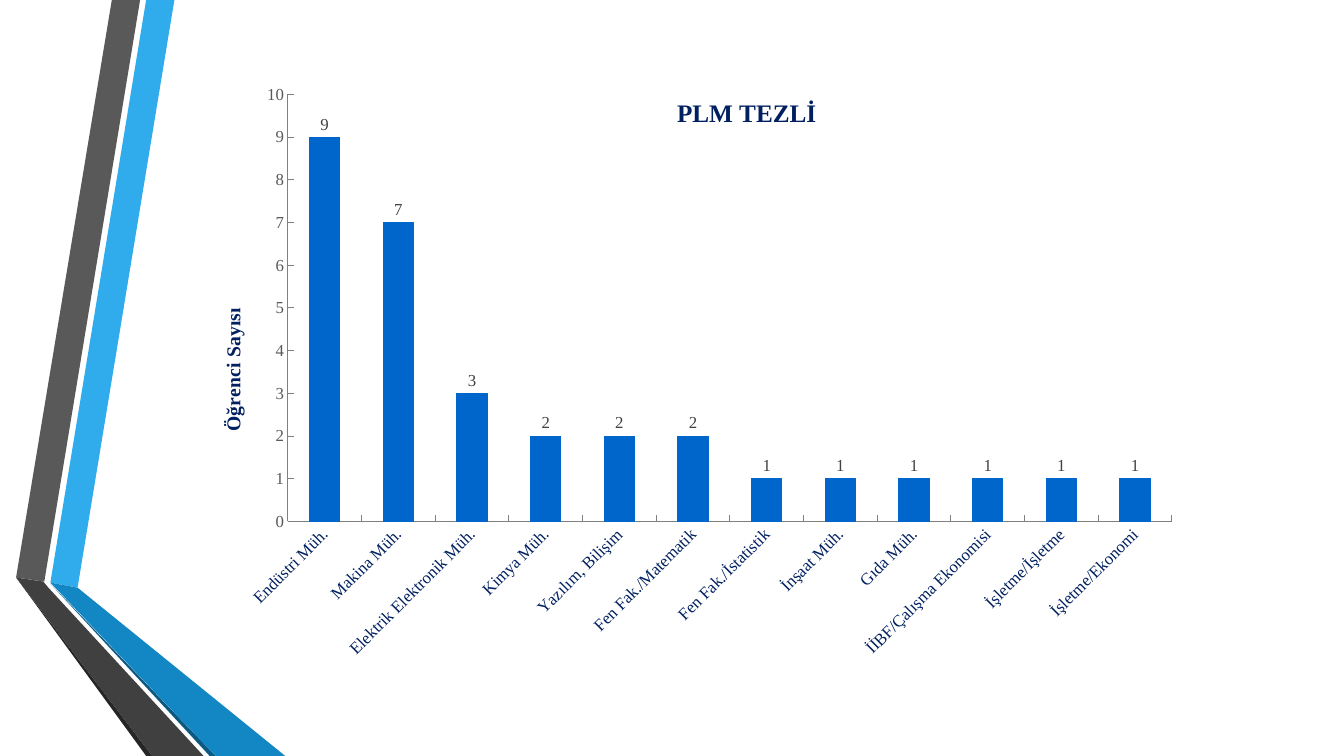
import pptx
import pptx.chart.data
import pptx.dml.color
import pptx.enum.chart
import pptx.oxml
import pptx.oxml.ns
import pptx.util
from pptx.util import Inches

COLORS = {
    "sky": "30ACEC", "gray": "595959", "black": "262626", "deep": "0C5A82",
    "blue": "1287C3", "charcoal": "404040", "navy": "002060",
    "axis": "808080", "bar": "0066CC",
}
RIBBONS = [
    ("sky", [(0.5, 5.78), (0.77, 5.83), (1.73, 0), (1.45, 0)]),
    ("gray", [(1.39, 0), (1.11, 0), (0.16, 5.73), (0.44, 5.77)]),
    ("black", [(0.16, 5.73), (1.45, 7.5), (1.51, 7.5)]),
    ("deep", [(0.5, 5.79), (2.08, 7.5), (2.14, 7.5)]),
    ("blue", [(0.5, 5.78), (2.14, 7.5), (2.83, 7.5), (0.77, 5.83)]),
    ("charcoal", [(2.02, 7.5), (0.48, 5.83), (0.43, 5.77), (0.16, 5.73), (1.51, 7.5)]),
]
STUDENTS = {
    "Endüstri Müh.": 9,
    "Makina Müh.": 7,
    "Elektrik Elektronik Müh.": 3,
    "Kimya Müh.": 2,
    "Yazılım, Bilişim": 2,
    "Fen Fak./Matematik": 2,
    "Fen Fak./İstatistik": 1,
    "İnşaat Müh.": 1,
    "Gıda Müh.": 1,
    "İİBF/Çalışma Ekonomisi": 1,
    "İşletme/İşletme": 1,
    "İşletme/Ekonomi": 1,
}


def rgb(name):
    return pptx.dml.color.RGBColor.from_string(COLORS[name])


def format_font(font, size=12, color="navy", bold=False, name="Times New Roman"):
    font.size = pptx.util.Pt(size)
    font.bold = bold
    font.name = name
    font.color.rgb = rgb(color)


def write_title(title, text, **style):
    para = title.text_frame.paragraphs[0]
    span = para.add_run()
    span.text = text
    format_font(span.font, **style)


def place(parent, index, inner=False, **fractions):
    tag = pptx.oxml.ns.qn("c:layout")
    for old in parent.findall(tag):
        parent.remove(old)
    target = '<c:layoutTarget val="inner"/>' if inner else ""
    modes = "".join(f'<c:{key}Mode val="edge"/>' for key in "xy")
    values = "".join(f'<c:{key} val="{value}"/>' for key, value in fractions.items())
    parent.insert(index, pptx.oxml.parse_xml(
        f'<c:layout {pptx.oxml.ns.nsdecls("c")}><c:manualLayout>'
        f"{target}{modes}{values}</c:manualLayout></c:layout>"))


class SlideBuilder:
    def __init__(self, page):
        self.page = page

    def ribbon(self, color, points):
        corners = [(Inches(x), Inches(y)) for x, y in points]
        builder = self.page.shapes.build_freeform(*corners[0])
        builder.add_line_segments(corners[1:], close=True)
        shape = builder.convert_to_shape()
        shape.shadow.inherit = False
        shape.fill.solid()
        shape.fill.fore_color.rgb = rgb(color)
        shape.line.fill.background()

    def axis(self, axis, color):
        axis.has_major_gridlines = False
        axis.major_tick_mark = pptx.enum.chart.XL_TICK_MARK.INSIDE
        axis.minor_tick_mark = pptx.enum.chart.XL_TICK_MARK.NONE
        axis.format.line.color.rgb = rgb("axis")
        axis.format.line.width = pptx.util.Pt(0.75)
        format_font(axis.tick_labels.font, color=color)

    def column_chart(self, title, axis_title, counts, left, top, width, height):
        data = pptx.chart.data.CategoryChartData()
        data.categories = list(counts)
        data.add_series("Series 1", list(counts.values()))
        chart = self.page.shapes.add_chart(
            pptx.enum.chart.XL_CHART_TYPE.COLUMN_CLUSTERED,
            Inches(left), Inches(top), Inches(width), Inches(height), data).chart
        chart.has_legend = False
        chart.font.size = pptx.util.Pt(10)
        chart.font.name = "Calibri"

        chart.has_title = True
        write_title(chart.chart_title, title, size=18, bold=True)
        heading = chart.chart_title._element
        place(heading, 1, x=0.47, y=0.03)
        heading.find(pptx.oxml.ns.qn("c:overlay")).set("val", "1")

        self.axis(chart.category_axis, "navy")
        chart.category_axis._element.txPr.bodyPr.set("rot", "-2700000")
        values = chart.value_axis
        self.axis(values, "gray")
        values.minimum_scale, values.maximum_scale, values.major_unit = 0, 10, 1
        values.has_title = True
        write_title(values.axis_title, axis_title, size=14, bold=True)
        body = values.axis_title._element.find(".//" + pptx.oxml.ns.qn("a:bodyPr"))
        body.set("rot", "-5400000")
        body.set("vert", "horz")
        place(values.axis_title._element, 1, x=0.01, y=0.38)

        plot = chart.plots[0]
        plot.vary_by_categories = False
        plot.gap_width = 142
        bars = plot.series[0]
        bars.format.fill.solid()
        bars.format.fill.fore_color.rgb = rgb("bar")
        bars.format.line.color.rgb = rgb("bar")
        bars.format.line.width = pptx.util.Pt(0.75)
        labels = bars.data_labels
        labels.show_value = True
        labels.position = pptx.enum.chart.XL_LABEL_POSITION.OUTSIDE_END
        format_font(labels.font, color="charcoal")
        area = chart._chartSpace.chart.plotArea
        place(area, 0, inner=True, x=0.082, y=0.033, w=0.892, h=0.706)


def main():
    deck = pptx.Presentation()
    deck.slide_width, deck.slide_height = Inches(13.33), Inches(7.5)
    builder = SlideBuilder(deck.slides.add_slide(deck.slide_layouts[6]))
    for color, points in RIBBONS:
        builder.ribbon(color, points)
    builder.column_chart("PLM TEZLİ", "Öğrenci Sayısı", STUDENTS, 2.05, 0.74, 9.83, 6)
    deck.save("out.pptx")


if __name__ == "__main__":
    main()
